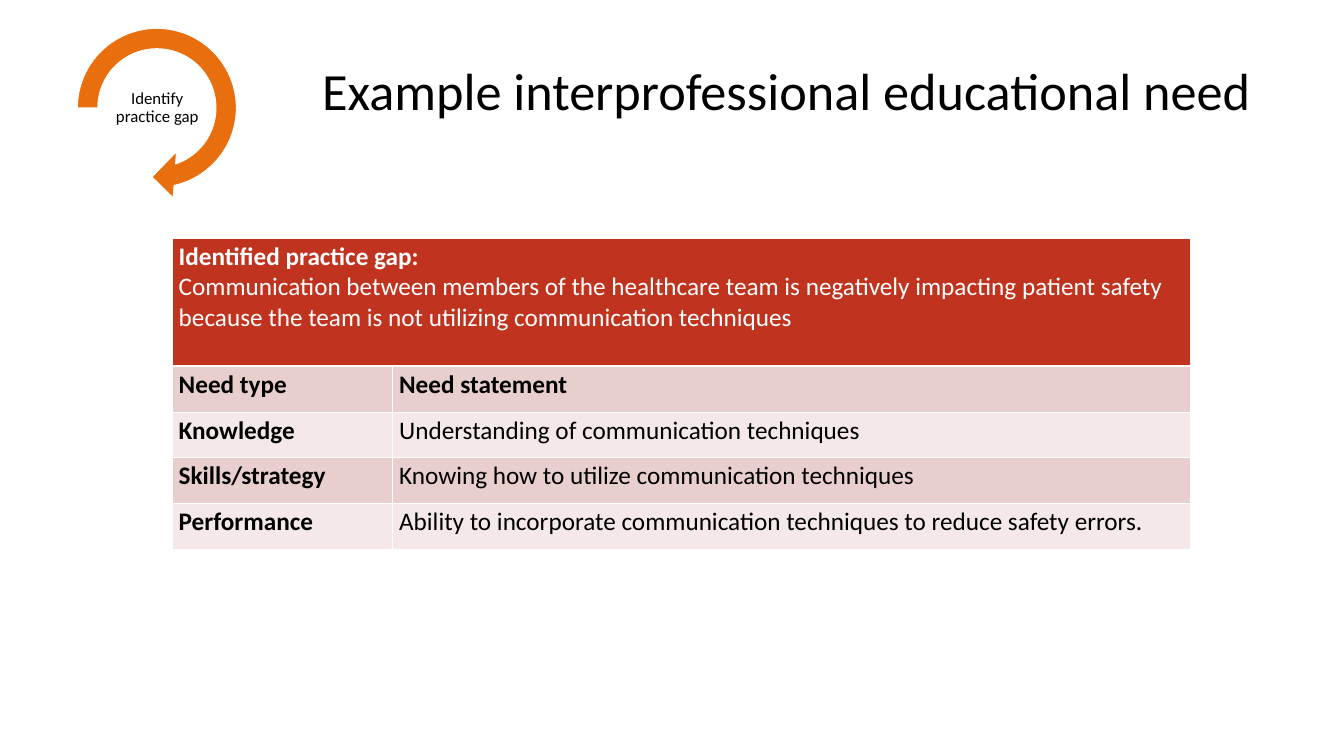
from pptx import Presentation
from pptx.dml.color import RGBColor
from pptx.enum.shapes import MSO_SHAPE
from pptx.enum.text import MSO_ANCHOR, PP_ALIGN
from pptx.oxml import parse_xml
from pptx.oxml.ns import nsdecls
from pptx.util import Inches, Pt

CIRCULAR_ARROW = MSO_SHAPE.CIRCULAR_ARROW
MIDDLE, CENTER = MSO_ANCHOR.MIDDLE, PP_ALIGN.CENTER

WHITE = RGBColor(0xFF, 0xFF, 0xFF)
BLACK = RGBColor(0x00, 0x00, 0x00)
ORANGE = RGBColor(0xE9, 0x6E, 0x0D)
RED = RGBColor(0xC0, 0x33, 0x1F)
PINK = RGBColor(0xE8, 0xCE, 0xCD)
PALE_PINK = RGBColor(0xF4, 0xE8, 0xE8)
FONT = "Calibri"

# Content
TITLE = "Example interprofessional educational need"
STEP = "Identify practice gap"
GAP_HEADING = "Identified practice gap:"
GAP_TEXT = (
    "Communication between members of the healthcare team is negatively impacting "
    "patient safety because the team is not utilizing communication techniques"
)
NEEDS = [
    ("Need type", "Need statement"),
    ("Knowledge", "Understanding of communication techniques"),
    ("Skills/strategy", "Knowing how to utilize communication techniques"),
    ("Performance", "Ability to incorporate communication techniques to reduce safety errors."),
]

# Layout, in inches
TITLE_BOX = (3.67, 0.94, 16.07, 0.89)
ARROW_BOX = (0.96, 0.23, 2.75, 2.75)
ARROW_ADJUSTMENTS = (0.11, 11.42, 45, 108, 0.125)
STEP_BOX = (1.57, 1.22, 1.54, 0.77)
TABLE_LEFT, TABLE_TOP = 2.56, 3.54
COLUMN_WIDTHS = (3.28, 11.88)
GAP_HEIGHT, NEED_HEIGHT = 1.91, 0.68


def inches(values):
    return [Inches(value) for value in values]


def style(paragraph, size, color, bold=False):
    font = paragraph.font if not paragraph.runs else paragraph.runs[0].font
    font.name, font.size, font.bold = FONT, Pt(size), bold
    font.color.rgb = color


def add_label(slide, box, text, size, inset):
    frame = slide.shapes.add_textbox(*inches(box)).text_frame
    frame.word_wrap = True
    frame.vertical_anchor = MIDDLE
    frame.margin_left = frame.margin_right = Inches(inset)
    frame.margin_top = frame.margin_bottom = Inches(min(inset, 0.05))
    frame.text = text
    paragraph = frame.paragraphs[0]
    paragraph.alignment, paragraph.line_spacing = CENTER, 0.9
    style(paragraph, size, BLACK)


def format_cell(cell, fill, top=1, bottom=1):
    properties = cell._tc.get_or_add_tcPr()
    for side, width in (("L", 1), ("R", 1), ("T", top), ("B", bottom)):
        properties.append(parse_xml(
            f'<a:ln{side} {nsdecls("a")} w="{Pt(width)}"><a:solidFill>'
            f'<a:srgbClr val="{WHITE}"/></a:solidFill></a:ln{side}>'
        ))
    cell.fill.solid()
    cell.fill.fore_color.rgb = fill


def add_needs_table(slide):
    height = GAP_HEIGHT + NEED_HEIGHT * len(NEEDS)
    box = (TABLE_LEFT, TABLE_TOP, sum(COLUMN_WIDTHS), height)
    table = slide.shapes.add_table(
        len(NEEDS) + 1, len(COLUMN_WIDTHS), *inches(box)).table
    for column, width in zip(table.columns, COLUMN_WIDTHS):
        column.width = Inches(width)
    for index, row in enumerate(table.rows):
        row.height = Inches(NEED_HEIGHT if index else GAP_HEIGHT)

    # Practice gap across the full width
    gap = table.cell(0, 0)
    gap.merge(table.cell(0, 1))
    gap.text = f"{GAP_HEADING}\n{GAP_TEXT}"
    for paragraph, bold in zip(gap.text_frame.paragraphs, (True, False)):
        style(paragraph, 27, WHITE, bold)
    for cell in table.rows[0].cells:
        format_cell(cell, RED, bottom=3)

    # Needs: headings and first column in bold, rows banded
    for r, need in enumerate(NEEDS, start=1):
        for c, text in enumerate(need):
            cell = table.cell(r, c)
            cell.text = text
            style(cell.text_frame.paragraphs[0], 27, BLACK, r == 1 or c == 0)
            format_cell(cell, PINK if r % 2 else PALE_PINK, top=3 if r == 1 else 1)


def main():
    presentation = Presentation()
    presentation.slide_width, presentation.slide_height = Inches(20), Inches(11.25)
    slide = presentation.slides.add_slide(presentation.slide_layouts[6])

    add_label(slide, TITLE_BOX, TITLE, 56, inset=0.1)

    # Process step inside its circular arrow
    arrow = slide.shapes.add_shape(CIRCULAR_ARROW, *inches(ARROW_BOX))
    for index, value in enumerate(ARROW_ADJUSTMENTS):
        arrow.adjustments[index] = value
    arrow.shadow.inherit = False
    arrow.fill.solid()
    arrow.fill.fore_color.rgb = ORANGE
    arrow.line.color.rgb = WHITE
    arrow.line.width = Pt(1)
    add_label(slide, STEP_BOX, STEP, 18, inset=0.01)

    add_needs_table(slide)
    presentation.save("out.pptx")


if __name__ == "__main__":
    main()
